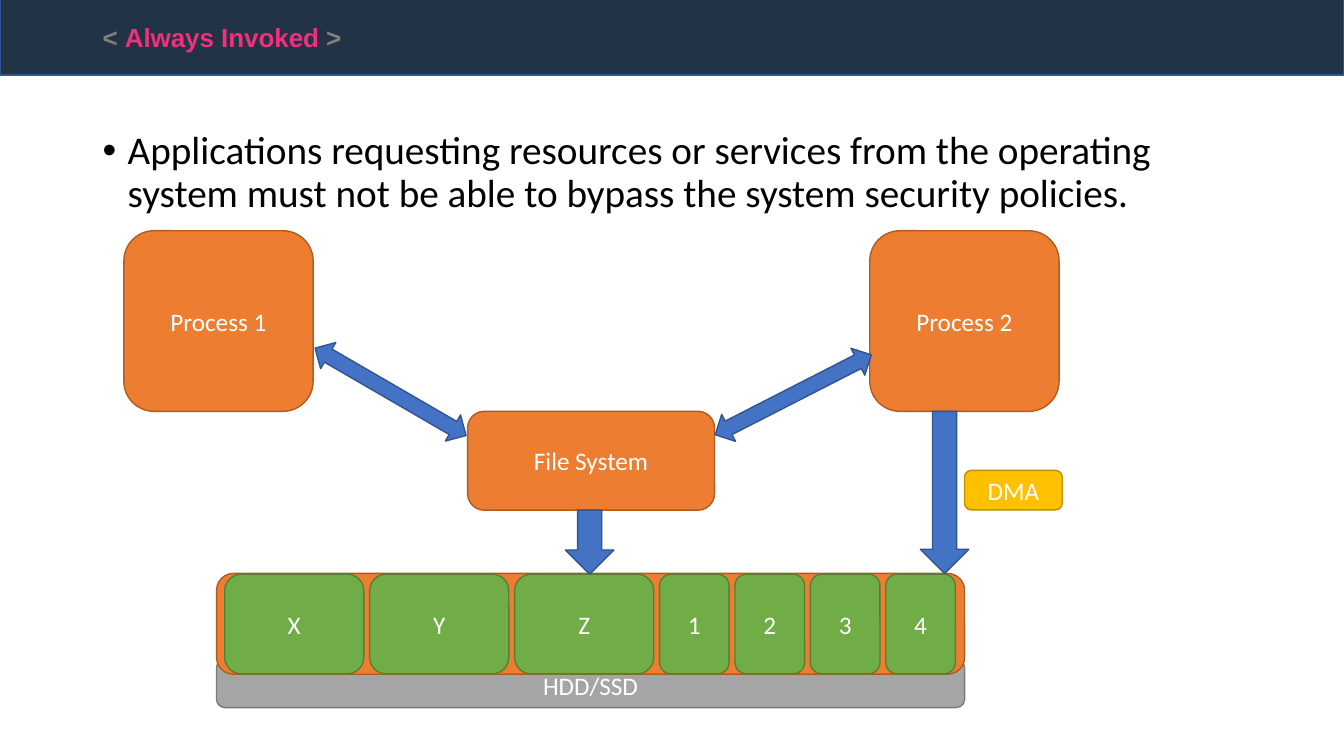
from lxml import etree
from pptx import Presentation
from pptx.dml.color import RGBColor
from pptx.enum import shapes, text
from pptx.oxml.ns import qn
from pptx.util import Pt

NAVY = RGBColor(0x22, 0x33, 0x46)
BLUE = RGBColor(0x44, 0x72, 0xC4)
BLUE_EDGE = RGBColor(0x32, 0x54, 0x91)
ORANGE = RGBColor(0xED, 0x7D, 0x31)
ORANGE_EDGE = RGBColor(0xAF, 0x5C, 0x24)
GREEN = RGBColor(0x70, 0xAD, 0x47)
GREEN_EDGE = RGBColor(0x53, 0x80, 0x35)
GREY = RGBColor(0xA5, 0xA5, 0xA5)
GREY_EDGE = RGBColor(0x7A, 0x7A, 0x7A)
GOLD = RGBColor(0xFF, 0xC0, 0x00)
GOLD_EDGE = RGBColor(0xBD, 0x8E, 0x00)
TITLE_GREY = RGBColor(0x80, 0x80, 0x80)
PINK = RGBColor(0xF1, 0x30, 0x7C)
WHITE = RGBColor(0xFF, 0xFF, 0xFF)
BLACK = RGBColor(0, 0, 0)

KIND = shapes.MSO_SHAPE
ANCHOR = text.MSO_ANCHOR


def set_font(font, color, **values):
    for name, value in values.items():
        setattr(font, name, value)
    font.color.rgb = color


def add_block(slide, kind, box, fill, edge, label="", anchor=ANCHOR.MIDDLE, rotation=0):
    shape = slide.shapes.add_shape(kind, *map(Pt, box))
    shape.shadow.inherit = False
    shape.rotation = rotation
    shape.fill.solid()
    shape.fill.fore_color.rgb = fill
    shape.line.color.rgb = edge
    shape.line.width = Pt(1)
    if label:
        frame = shape.text_frame
        frame.vertical_anchor = anchor
        paragraph = frame.paragraphs[0]
        paragraph.alignment = text.PP_ALIGN.CENTER
        run = paragraph.add_run()
        run.text = label
        set_font(run.font, WHITE, name="Calibri", size=Pt(18))
    return shape


def add_text_box(slide, box):
    frame = slide.shapes.add_textbox(*map(Pt, box)).text_frame
    frame.word_wrap = True
    return frame


def add_header(slide, box):
    left, top, width, height = box
    add_block(slide, KIND.RECTANGLE, box, NAVY, BLUE_EDGE)
    frame = add_text_box(slide, (left + 66.2, top + 10.4, width - 68.6, 46))
    frame.auto_size = text.MSO_AUTO_SIZE.SHAPE_TO_FIT_TEXT
    parts = [("< ", TITLE_GREY), ("Always Invoked ", PINK), (">", TITLE_GREY)]
    for words, color in parts:
        run = frame.paragraphs[0].add_run()
        run.text = words
        set_font(run.font, color, name="Arial", size=Pt(32), bold=True)
        run.font._element.set("baseline", "30000")  # raised text


def add_statement(slide, box):
    paragraph = add_text_box(slide, box).paragraphs[0]
    # Hanging bullet
    properties = paragraph._p.get_or_add_pPr()
    properties.set("marL", str(Pt(18)))
    properties.set("indent", str(-Pt(18)))
    etree.SubElement(properties, qn("a:buFont"), typeface="Arial")
    etree.SubElement(properties, qn("a:buChar"), char="•")
    paragraph.line_spacing = 0.9
    run = paragraph.add_run()
    run.text = ("Applications requesting resources or services from the operating "
                "system must not be able to bypass the system security policies.")
    set_font(run.font, BLACK, name="Calibri", size=Pt(28))


def add_storage(slide, box):
    left, top, width, height = box
    # Device behind the block container
    add_block(slide, KIND.ROUNDED_RECTANGLE, (left, top + 61.2, width, 34.6),
              GREY, GREY_EDGE, "HDD/SSD", ANCHOR.BOTTOM)
    add_block(slide, KIND.ROUNDED_RECTANGLE, box, ORANGE, ORANGE_EDGE)
    # Wide file blocks, then narrow numbered blocks
    block_left, gap = left + 5.8, 4.15
    for label in "XYZ1234":
        block_width = 99.4 if label.isalpha() else 49.7
        add_block(slide, KIND.ROUNDED_RECTANGLE,
                  (block_left, top + 0.5, block_width, height - 0.7),
                  GREEN, GREEN_EDGE, label)
        block_left += block_width + gap


def add_diagram(slide, left, top):
    add_storage(slide, (left + 66.2, top + 244.8, 534.3, 72))

    # Processes and file system
    for label, x, y, width, height in [
        ("Process 1", 0, 0, 135.2, 129),
        ("Process 2", 532.8, 0, 135.2, 129),
        ("File System", 245.5, 129, 176.4, 70.6),
    ]:
        add_block(slide, KIND.ROUNDED_RECTANGLE, (left + x, top + y, width, height),
                  ORANGE, ORANGE_EDGE, label)

    # Access paths
    for kind, x, y, width, height, rotation in [
        (KIND.LEFT_RIGHT_ARROW, 128.2, 104.3, 124.6, 21.6, 30.1),
        (KIND.LEFT_RIGHT_ARROW, 415.5, 106.4, 125.3, 21.6, 332.9),
        (KIND.DOWN_ARROW, 568.9, 129, 34.6, 115.8, 0),
        (KIND.DOWN_ARROW, 315.4, 199.6, 34.6, 45.8, 0),
    ]:
        add_block(slide, kind, (left + x, top + y, width, height),
                  BLUE, BLUE_EDGE, rotation=rotation)

    # Direct path label
    add_block(slide, KIND.ROUNDED_RECTANGLE, (left + 600.5, top + 171.2, 69.8, 28.2),
              GOLD, GOLD_EDGE, "DMA")


def main():
    presentation = Presentation()
    presentation.slide_width = Pt(960)
    presentation.slide_height = Pt(540)
    slide = presentation.slides.add_slide(presentation.slide_layouts[6])
    add_header(slide, (0, -2.5, 960, 56))
    add_statement(slide, (66.2, 90, 828, 71.3))
    add_diagram(slide, 88.5, 164.8)
    presentation.save("out.pptx")


if __name__ == "__main__":
    main()
